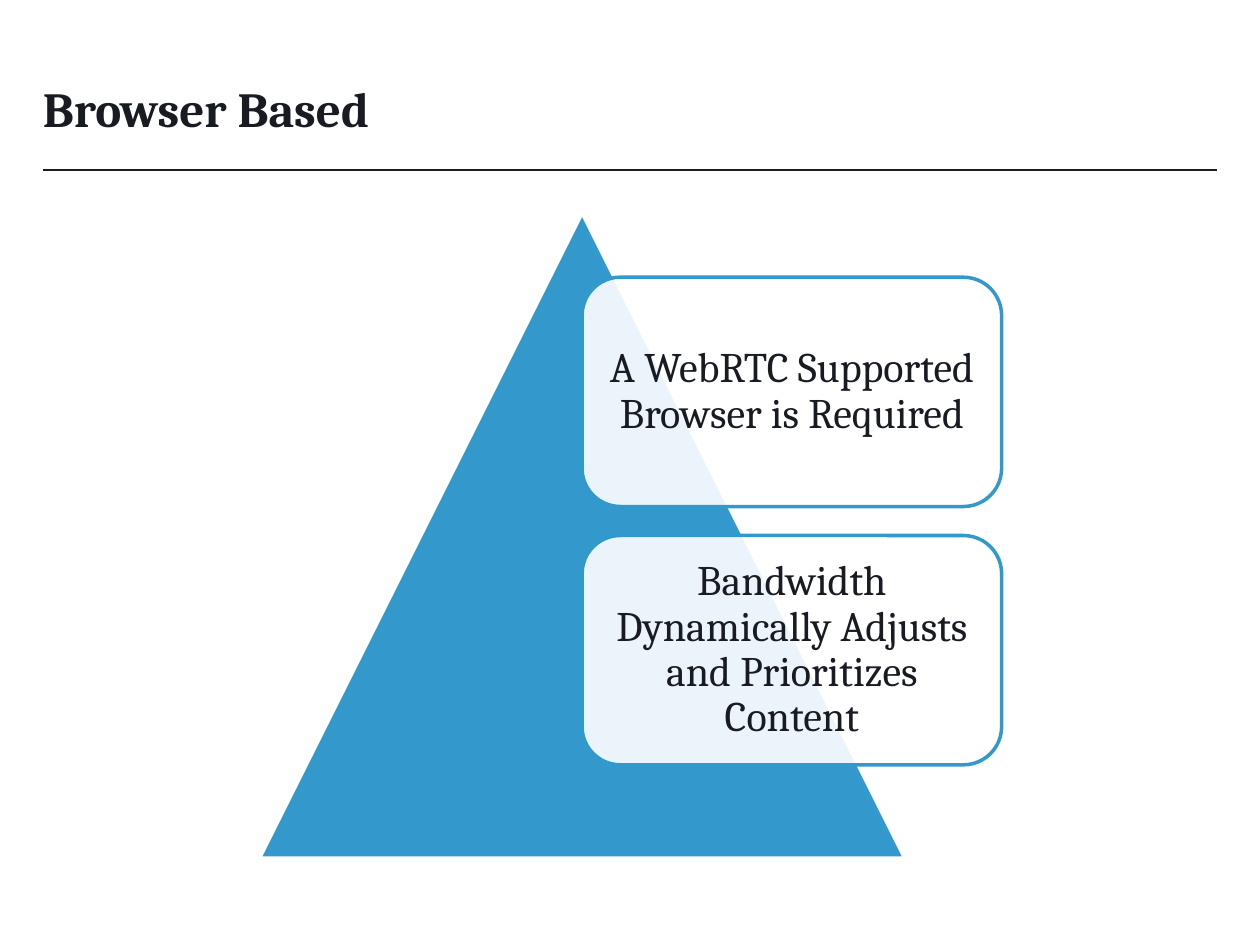
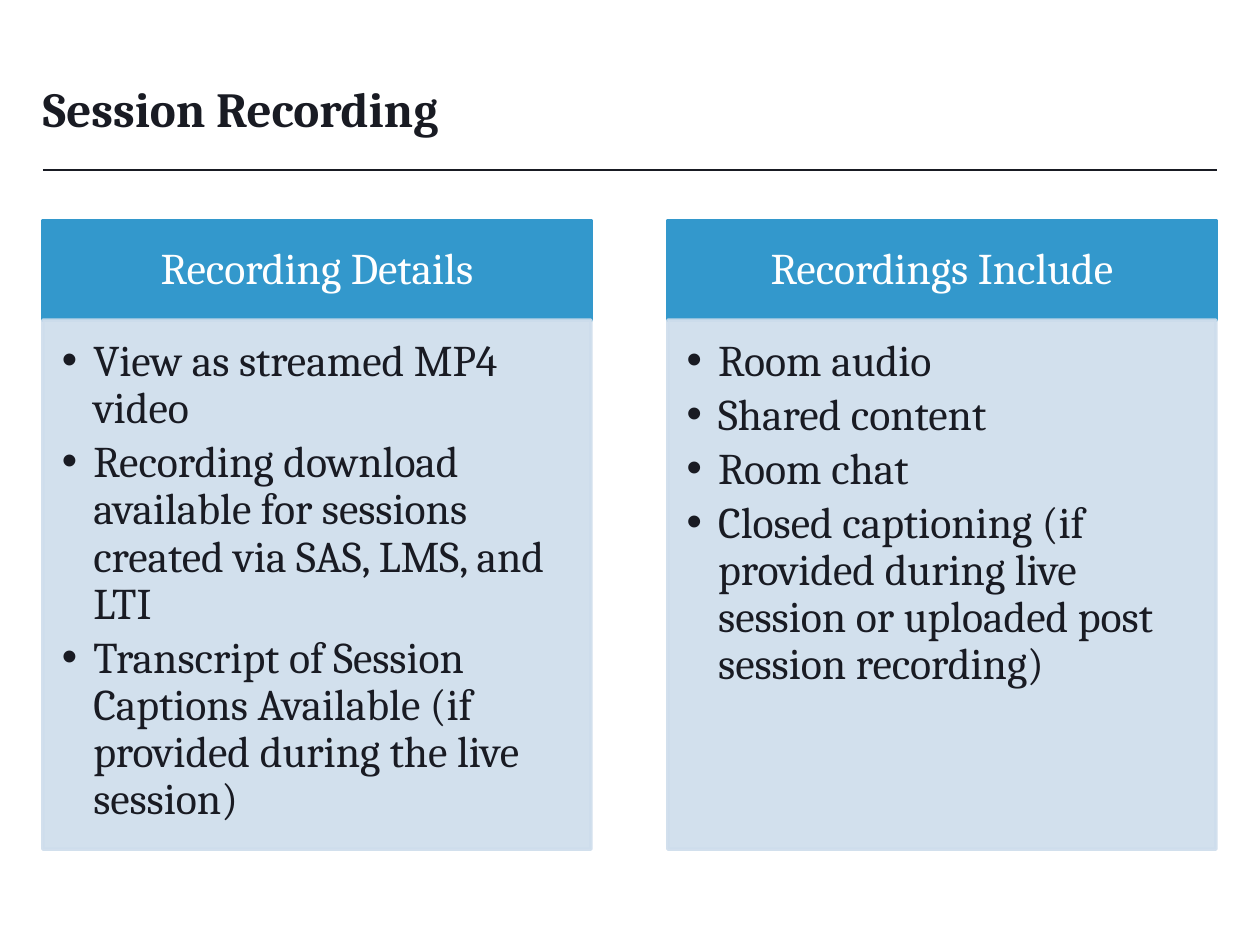
"""Build two slides on browser support and session recording."""
from lxml import etree
from pptx import Presentation
from pptx.dml.color import RGBColor
from pptx.enum.shapes import MSO_CONNECTOR, MSO_SHAPE
from pptx.enum.text import MSO_ANCHOR, MSO_AUTO_SIZE, PP_ALIGN
from pptx.oxml.ns import qn
from pptx.util import Inches, Pt

TRIANGLE = MSO_SHAPE.ISOSCELES_TRIANGLE
ROUNDED = MSO_SHAPE.ROUNDED_RECTANGLE
STRAIGHT = MSO_CONNECTOR.STRAIGHT
TOP, MIDDLE, BOTTOM = MSO_ANCHOR.TOP, MSO_ANCHOR.MIDDLE, MSO_ANCHOR.BOTTOM
LEFT, CENTER = PP_ALIGN.LEFT, PP_ALIGN.CENTER
NO_AUTOFIT = MSO_AUTO_SIZE.NONE

INK, BLUE, PALE, WHITE = "191B23", "3398CC", "CEDDEC", "FFFFFF"
FONT = "Cambria"
MARGIN = 0.34
TITLE_ONLY, COMPARISON = 5, 4


def paint(fill, color, opacity=100):
    """Apply a solid colour to the fill of a shape, line or font."""
    fill.solid()
    fill.fore_color.rgb = RGBColor.from_string(color)
    if opacity < 100:
        color_element = fill._xPr.find(qn("a:solidFill"))[0]
        etree.SubElement(color_element, qn("a:alpha"), val=str(opacity * 1000))


def write(shape, texts, size, color, align, anchor, insets, bold=False, bullets=False):
    """Write one paragraph per text into a shape."""
    frame = shape.text_frame
    frame.word_wrap = True
    frame.auto_size = NO_AUTOFIT
    frame.vertical_anchor = anchor
    (frame.margin_left, frame.margin_top,
     frame.margin_right, frame.margin_bottom) = [Inches(inset) for inset in insets]
    for index, text in enumerate(texts):
        paragraph = frame.add_paragraph() if index else frame.paragraphs[0]
        paragraph.alignment = align
        paragraph.line_spacing = 0.9
        paragraph.space_before = Pt(0)
        if bullets:
            paragraph.space_after = Pt(size * 0.15)
            properties = paragraph._p.get_or_add_pPr()
            properties.set("marL", str(Inches(0.25)))
            properties.set("indent", str(Inches(-0.25)))
            etree.SubElement(properties, qn("a:buFont"), typeface="Arial")
            etree.SubElement(properties, qn("a:buChar"), char="•")
        run = paragraph.add_run()
        run.text = text
        run.font.name = FONT
        run.font.size = Pt(size)
        run.font.bold = bold
        paint(run.font.fill, color)


presentation = Presentation()
presentation.slide_width = Inches(10)
presentation.slide_height = Inches(7.5)

slides = []
for title_text, layout in (("Browser Based", TITLE_ONLY), ("Session Recording", COMPARISON)):
    slide = presentation.slides.add_slide(presentation.slide_layouts[layout])
    slides.append(slide)
    rule = slide.shapes.add_connector(
        STRAIGHT, Inches(MARGIN), Inches(1.35), Inches(10 - MARGIN), Inches(1.35))
    rule.line.width = Pt(0.75)
    paint(rule.line.fill, INK)
    etree.SubElement(rule._element.spPr, qn("a:effectLst"))
    title = slide.shapes.title
    title.left, title.top = Inches(MARGIN), Inches(0.31)
    title.width, title.height = Inches(10 - 2 * MARGIN), Inches(0.84)
    write(title, [title_text], 28, INK, LEFT, BOTTOM, (0, 0.05, 0, 0.05), bold=True)

browser_slide, recording_slide = slides

triangle = browser_slide.shapes.add_shape(
    TRIANGLE, Inches(2.06), Inches(1.69), Inches(5.12), Inches(5.12))
triangle.shadow.inherit = False
triangle.line.width = Pt(2)
paint(triangle.fill, BLUE)
paint(triangle.line.fill, WHITE)

requirements = (
    "A WebRTC Supported Browser is Required",
    "Bandwidth Dynamically Adjusts and Prioritizes Content",
)
for row, requirement in enumerate(requirements):
    card = browser_slide.shapes.add_shape(
        ROUNDED, Inches(4.62), Inches(2.2 + 2.05 * row), Inches(3.33), Inches(1.82))
    card.shadow.inherit = False
    card.line.width = Pt(2)
    paint(card.fill, WHITE, 90)
    paint(card.line.fill, BLUE)
    write(card, [requirement], 24, INK, CENTER, MIDDLE, (0.1, 0.1, 0.1, 0.1))

columns = (
    ("Recording Details", (
        "View as streamed MP4 video",
        "Recording download available for sessions created via SAS, LMS, and LTI",
        "Transcript of Session Captions Available (if provided during the live session)",
    )),
    ("Recordings Include", (
        "Room audio",
        "Shared content",
        "Room chat",
        "Closed captioning (if provided during live session or uploaded post session recording)",
    )),
)
for column, (heading, items) in enumerate(columns):
    header = recording_slide.placeholders[1 + 2 * column]
    body = recording_slide.placeholders[2 + 2 * column]
    for box, top, height, color, opacity in (
            (header, 1.75, 0.79, BLUE, 100), (body, 2.54, 4.2, PALE, 90)):
        box.left, box.top = Inches(MARGIN + 4.96 * column), Inches(top)
        box.width, box.height = Inches(4.35), Inches(height)
        paint(box.fill, color, opacity)
        box.line.width = Pt(2)
        paint(box.line.fill, color, opacity)
    write(header, [heading], 25, WHITE, CENTER, MIDDLE, (0.19, 0.11, 0.19, 0.11))
    write(body, items, 25, INK, LEFT, TOP, (0.15, 0.15, 0.19, 0.22), bullets=True)

presentation.save("out.pptx")
